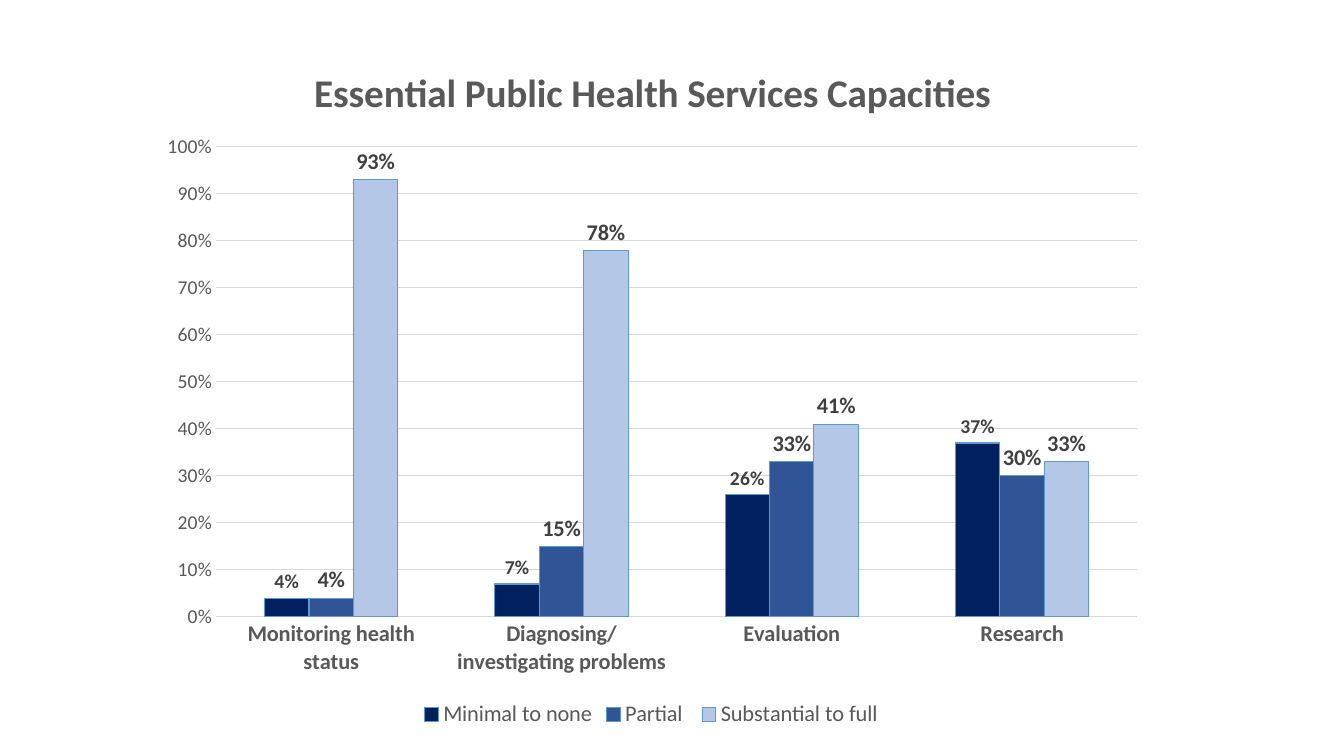
from lxml import etree
from pptx import Presentation
from pptx.chart.data import CategoryChartData
from pptx.dml.color import RGBColor
from pptx.enum.chart import (
    XL_CHART_TYPE, XL_LABEL_POSITION, XL_LEGEND_POSITION, XL_TICK_MARK)
from pptx.oxml.ns import qn
from pptx.util import Inches, Pt

COLUMNS = XL_CHART_TYPE.COLUMN_CLUSTERED
OUTSIDE_END = XL_LABEL_POSITION.OUTSIDE_END
BOTTOM = XL_LEGEND_POSITION.BOTTOM
NO_TICKS = XL_TICK_MARK.NONE

FONT = "Calibri"
GRAY_TEXT = RGBColor(0x59, 0x59, 0x59)
LABEL_TEXT = RGBColor(0x40, 0x40, 0x40)
GRID = RGBColor(0xD9, 0xD9, 0xD9)
BAR_EDGE = RGBColor(0x5B, 0x9B, 0xD5)
NAVY = RGBColor(0x00, 0x20, 0x60)
BLUE = RGBColor(0x2F, 0x55, 0x97)
PALE_BLUE = RGBColor(0xB4, 0xC7, 0xE7)

TITLE = "Essential Public Health Services Capacities"
SERVICES = ["Monitoring health status", "Diagnosing/investigating problems",
            "Evaluation", "Research"]
# Name, values, fill colour, label size
CAPACITIES = [
    ("Minimal to none", (0.04, 0.07, 0.26, 0.37), NAVY, 14),
    ("Partial ", (0.04, 0.15, 0.33, 0.30), BLUE, 16),
    ("Substantial to full", (0.93, 0.78, 0.41, 0.33), PALE_BLUE, 16),
]


def format_font(font, size, color=GRAY_TEXT, bold=False):
    font.name = FONT
    font.size = Pt(size)
    font.bold = bold
    font.color.rgb = color


def format_line(line, color):
    line.color.rgb = color
    line.width = Pt(0.75)


def place(element, **fractions):
    """Set a manual layout, in fractions of the chart's size."""
    layout = element.find(qn("c:layout"))
    if layout is None:
        layout = etree.Element(qn("c:layout"))
        text = element.find(qn("c:tx"))
        if text is None:
            element.insert(0, layout)
        else:
            text.addnext(layout)
    manual = etree.SubElement(layout, qn("c:manualLayout"))
    settings = {"xMode": "edge", "yMode": "edge", **fractions}
    if "w" in fractions:
        settings = {"layoutTarget": "inner", **settings}
    for name, value in settings.items():
        etree.SubElement(manual, qn("c:" + name)).set("val", str(value))


def add_title(chart):
    chart.has_title = True
    frame = chart.chart_title.text_frame
    frame.text = TITLE
    format_font(frame.paragraphs[0].runs[0].font, 28, bold=True)
    chart.chart_title.include_in_layout = False
    place(chart.chart_title._element, x=0.16, y=0.04)


def format_axes(chart):
    services = chart.category_axis
    services.major_tick_mark = services.minor_tick_mark = NO_TICKS
    format_font(services.tick_labels.font, 16, bold=True)
    format_line(services.format.line, GRID)

    percent = chart.value_axis
    percent.minimum_scale, percent.maximum_scale = 0, 1
    percent.major_unit = 0.1
    percent.major_tick_mark = percent.minor_tick_mark = NO_TICKS
    percent.tick_labels.number_format = "0%"
    percent.tick_labels.number_format_is_linked = False
    format_font(percent.tick_labels.font, 14)
    percent.format.line.fill.background()
    format_line(percent.major_gridlines.format.line, GRID)


def format_series(series, color, label_size):
    series.format.fill.solid()
    series.format.fill.fore_color.rgb = color
    format_line(series.format.line, BAR_EDGE)
    labels = series.data_labels
    labels.show_value = True
    labels.position = OUTSIDE_END
    labels.number_format = "0%"
    labels.number_format_is_linked = False
    format_font(labels.font, label_size, LABEL_TEXT, bold=True)


def add_capacity_chart(slide):
    data = CategoryChartData(number_format="0%")
    data.categories = SERVICES
    for name, values, _, _ in CAPACITIES:
        data.add_series(name, values)
    chart = slide.shapes.add_chart(
        COLUMNS, Inches(1.44), Inches(0.31), Inches(10.04), Inches(6.96),
        data).chart
    chart.font.name = FONT
    chart.font.size = Pt(10)

    # Bars
    plot = chart.plots[0]
    plot.gap_width = 219
    plot.overlap = 0
    plot.vary_by_categories = False
    for series, (_, _, color, label_size) in zip(plot.series, CAPACITIES):
        format_series(series, color, label_size)

    # Title, axes and legend
    add_title(chart)
    format_axes(chart)
    chart.has_legend = True
    chart.legend.position = BOTTOM
    chart.legend.include_in_layout = False
    format_font(chart.legend.font, 16)
    plot_area = chart._chartSpace.chart.plotArea
    place(plot_area, x=0.07, y=0.165, w=0.91, h=0.67)


def main():
    deck = Presentation()
    deck.slide_width = Inches(13.33)
    deck.slide_height = Inches(7.5)
    slide = deck.slides.add_slide(deck.slide_layouts.get_by_name("Blank"))
    add_capacity_chart(slide)
    deck.save("out.pptx")


if __name__ == "__main__":
    main()
